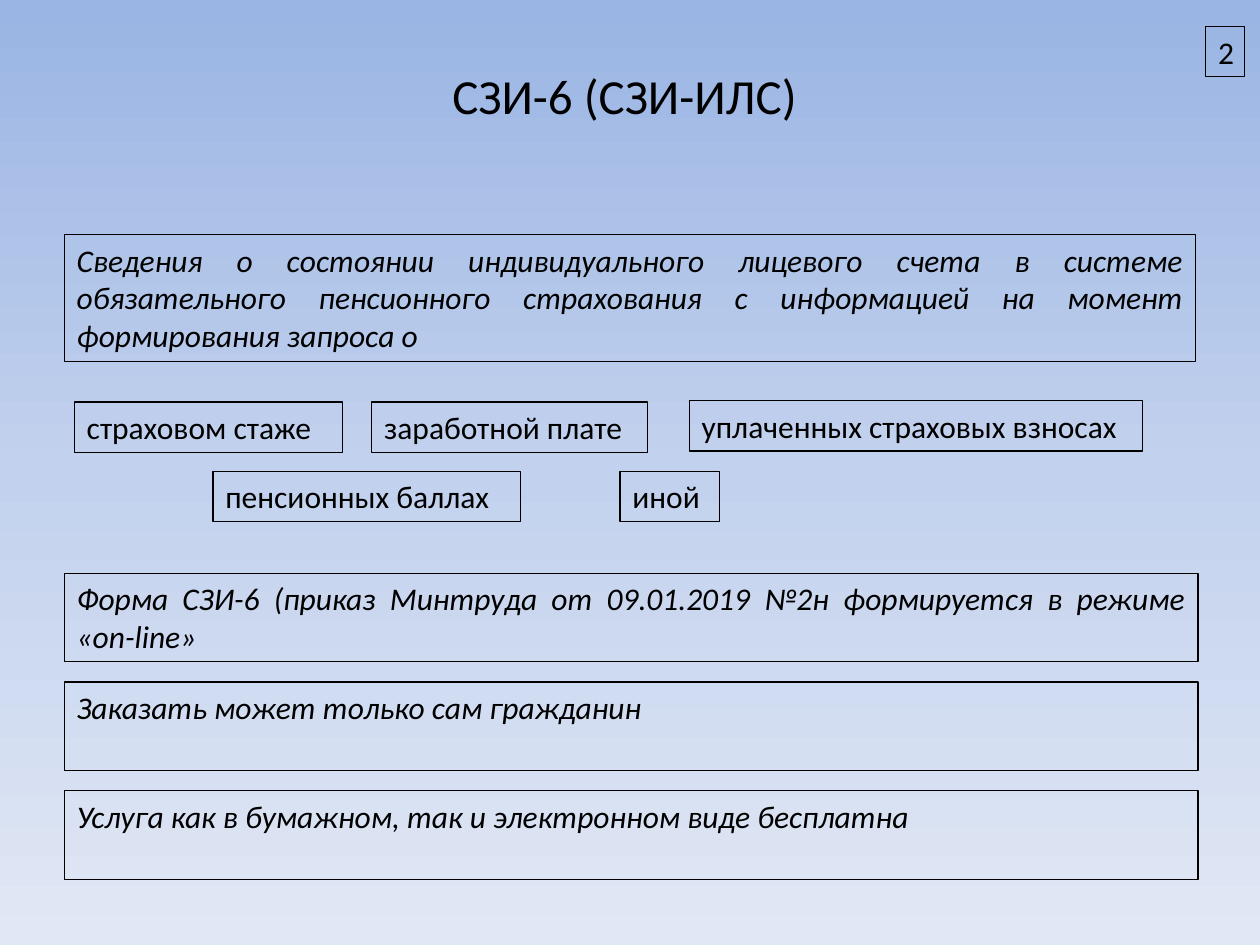
import copy
from dataclasses import dataclass

import pptx
import pptx.dml.color
import pptx.enum.text
import pptx.oxml.ns
import pptx.util

Inches = pptx.util.Inches
Pt = pptx.util.Pt
RGBColor = pptx.dml.color.RGBColor
Align = pptx.enum.text.PP_ALIGN
Anchor = pptx.enum.text.MSO_ANCHOR
AutoSize = pptx.enum.text.MSO_AUTO_SIZE


@dataclass(frozen=True)
class Theme:
    font: str = "Calibri"
    ink: str = "000000"
    title_size: int = 28
    body_size: int = 18
    border: float = 0.75
    sky: tuple = ((0, "9AB5E4"), (0.5, "C2D1ED"), (1, "E1E8F5"))


THEME = Theme()


def paint_background(slide):
    fill = slide.background.fill
    fill.gradient()
    fill.gradient_angle = 270
    stop_list = next(slide.element.iter(pptx.oxml.ns.qn("a:gsLst")))
    stop_list.append(copy.deepcopy(stop_list[-1]))
    for stop, (position, color) in zip(fill.gradient_stops, THEME.sky):
        stop.position = position
        stop.color.rgb = RGBColor.from_string(color)


def add_words(slide, box, words, size, align, italic=False):
    label = slide.shapes.add_textbox(*(Inches(length) for length in box))
    frame = label.text_frame
    frame.word_wrap = True
    frame.auto_size = AutoSize.NONE
    paragraph = frame.paragraphs[0]
    paragraph.alignment = align
    run = paragraph.add_run()
    run.text = words
    run.font.name = THEME.font
    run.font.size = Pt(size)
    run.font.italic = italic
    run.font.color.rgb = RGBColor.from_string(THEME.ink)
    return label


def add_title(slide, box, words):
    title = add_words(slide, box, words, THEME.title_size, Align.CENTER)
    title.text_frame.vertical_anchor = Anchor.MIDDLE


def add_framed(slide, box, words, align=Align.JUSTIFY, italic=False):
    framed = add_words(slide, box, words, THEME.body_size, align, italic)
    framed.line.color.rgb = RGBColor.from_string(THEME.ink)
    framed.line.width = Pt(THEME.border)
    return framed


def add_page_number(slide, box, number):
    page = add_framed(slide, box, number, Align.LEFT)
    page.text_frame.word_wrap = False


def add_topics(slide, box, topics):
    left, top, _, height = box
    for x, y, width, topic in topics:
        add_framed(slide, (left + x, top + y, width, height), topic)


def add_notes_stack(slide, box, notes, gap):
    left, top, width, height = box
    row_height = (height - gap * (len(notes) - 1)) / len(notes)
    for index, note in enumerate(notes):
        y = top + index * (row_height + gap)
        add_framed(slide, (left, y, width, row_height), note, italic=True)


def main():
    deck = pptx.Presentation()
    deck.slide_width, deck.slide_height = Inches(10), Inches(7.5)
    slide = deck.slides.add_slide(deck.slide_layouts[6])
    paint_background(slide)
    add_title(slide, (0.5, 0.13, 9, 1.25), "СЗИ-6 (СЗИ-ИЛС) ")
    add_framed(
        slide,
        (0.51, 1.86, 8.98, 1.01),
        "Сведения о состоянии индивидуального лицевого счета в системе "
        "обязательного пенсионного страхования с информацией на момент "
        "формирования запроса о",
        italic=True,
    )
    topics = (
        (0, 0, 2.13, "страховом стаже"),
        (2.36, 0, 2.19, "заработной плате"),
        (4.88, -0.01, 3.6, "уплаченных страховых взносах "),
        (1.1, 0.55, 2.44, "пенсионных баллах "),
        (4.33, 0.55, 0.79, "иной"),
    )
    add_topics(slide, (0.59, 3.19, 8.48, 0.4), topics)
    notes = (
        "Форма СЗИ-6 (приказ Минтруда от 09.01.2019 №2н формируется в режиме «on-line»",
        "Заказать может только сам гражданин",
        "Услуга как в бумажном, так и электронном виде бесплатна",
    )
    add_notes_stack(slide, (0.51, 4.55, 9, 2.43), notes, gap=0.16)
    add_page_number(slide, (9.57, 0.21, 0.31, 0.4), "2")
    deck.save("out.pptx")


if __name__ == "__main__":
    main()
